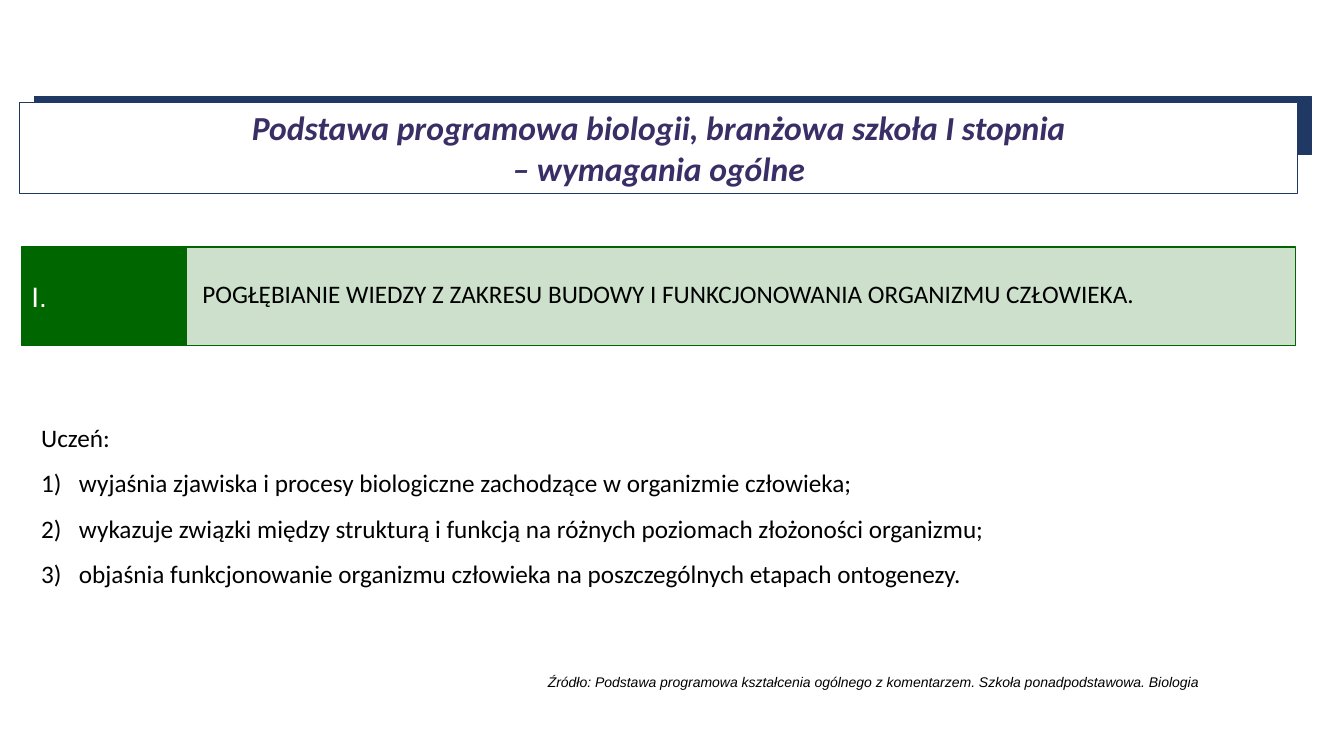
import pptx
import pptx.dml.color
import pptx.enum.shapes
import pptx.enum.text
import pptx.util
from lxml import etree
from pptx.oxml.ns import qn

Pt = pptx.util.Pt
ALIGN = pptx.enum.text.PP_ALIGN
ANCHOR = pptx.enum.text.MSO_ANCHOR

NAVY, GREEN, VIOLET, WHITE, BLACK = "203864", "006600", "392E65", "FFFFFF", "000000"

TITLE = ["Podstawa programowa biologii, branżowa szkoła I stopnia",
         "– wymagania ogólne"]
NUMERAL = "I."
GOAL = "POGŁĘBIANIE WIEDZY Z ZAKRESU BUDOWY I FUNKCJONOWANIA ORGANIZMU CZŁOWIEKA."
INTRO = "Uczeń:"
SKILLS = [
    "wyjaśnia zjawiska i procesy biologiczne zachodzące w organizmie człowieka;",
    "wykazuje związki między strukturą i funkcją na różnych poziomach złożoności organizmu;",
    "objaśnia funkcjonowanie organizmu człowieka na poszczególnych etapach ontogenezy.",
]
SOURCE = ("Źródło: Podstawa programowa kształcenia ogólnego z komentarzem. "
          "Szkoła ponadpodstawowa. Biologia")

BAND_LEFT, BAND_TOP, BAND_HEIGHT = 15.4, 176.4, 70.6
NUMERAL_WIDTH, GOAL_WIDTH = 117.6, 792.4
SKILL_INDENT = 27


def rgb(value):
    return pptx.dml.color.RGBColor.from_string(value)


def add_box(slide, left, top, width, height, fill, line, line_width):
    box = slide.shapes.add_shape(pptx.enum.shapes.MSO_SHAPE.RECTANGLE,
                                 Pt(left), Pt(top), Pt(width), Pt(height))
    box.shadow.inherit = False
    box.fill.solid()
    box.fill.fore_color.rgb = rgb(fill)
    box.line.color.rgb = rgb(line)
    box.line.width = Pt(line_width)
    return box


def add_label(slide, left, top, width, height):
    return slide.shapes.add_textbox(Pt(left), Pt(top), Pt(width), Pt(height))


def write(shape, lines, size, color=BLACK, font="Calibri", align=ALIGN.LEFT,
          anchor=ANCHOR.MIDDLE, bold=False, italic=False):
    """Fill the shape with one paragraph per line and return the paragraphs."""
    frame = shape.text_frame
    frame.word_wrap = True
    frame.vertical_anchor = anchor
    frame.text = "\n".join(lines)
    for paragraph in frame.paragraphs:
        paragraph.alignment = align
        paragraph.font.name = font
        paragraph.font.size = Pt(size)
        paragraph.font.bold = bold
        paragraph.font.italic = italic
        paragraph.font.color.rgb = rgb(color)
    return frame.paragraphs


def number(paragraph):
    """Turn the paragraph into an item of a list numbered 1), 2), ..."""
    paragraph.line_spacing = 1.5
    properties = paragraph._p.get_or_add_pPr()
    properties.set("marL", str(Pt(SKILL_INDENT)))
    properties.set("indent", str(-Pt(SKILL_INDENT)))
    numbering = etree.Element(qn("a:buAutoNum"), type="arabicParenR")
    properties.find(qn("a:defRPr")).addprevious(numbering)


def set_opacity(shape, percent):
    color = shape.fill._xPr.find(qn("a:solidFill"))[0]
    etree.SubElement(color, qn("a:alpha"), val=str(percent * 1000))


def main():
    deck = pptx.Presentation()
    deck.slide_width, deck.slide_height = Pt(960), Pt(540)
    slide = deck.slides.add_slide(deck.slide_layouts[6])

    numeral = add_box(slide, BAND_LEFT, BAND_TOP, NUMERAL_WIDTH, BAND_HEIGHT, GREEN, GREEN, 1)
    write(numeral, [NUMERAL], 20, WHITE, "Arial")
    goal_band = add_box(slide, BAND_LEFT + NUMERAL_WIDTH, BAND_TOP, GOAL_WIDTH, BAND_HEIGHT,
                        GREEN, GREEN, 1)
    set_opacity(goal_band, 20)

    add_box(slide, 24.5, 69.1, 912.2, 41, NAVY, NAVY, 0.75)
    title = add_box(slide, 14.1, 73, 913, 65.4, WHITE, NAVY, 0.75)
    write(title, TITLE, 24, VIOLET, align=ALIGN.CENTER, anchor=ANCHOR.TOP,
          bold=True, italic=True)

    skills = write(add_label(slide, 22.3, 261.4, 905.8, 199.4), [INTRO] + SKILLS, 18)
    for skill in skills[1:]:
        number(skill)

    write(add_label(slide, 384.2, 472.3, 486.3, 29.5), [SOURCE], 10, font="Arial", italic=True)
    write(add_label(slide, 137.5, 195.1, 784, 29), [GOAL], 18,
          align=ALIGN.JUSTIFY, anchor=ANCHOR.TOP)

    deck.save("out.pptx")


if __name__ == "__main__":
    main()
